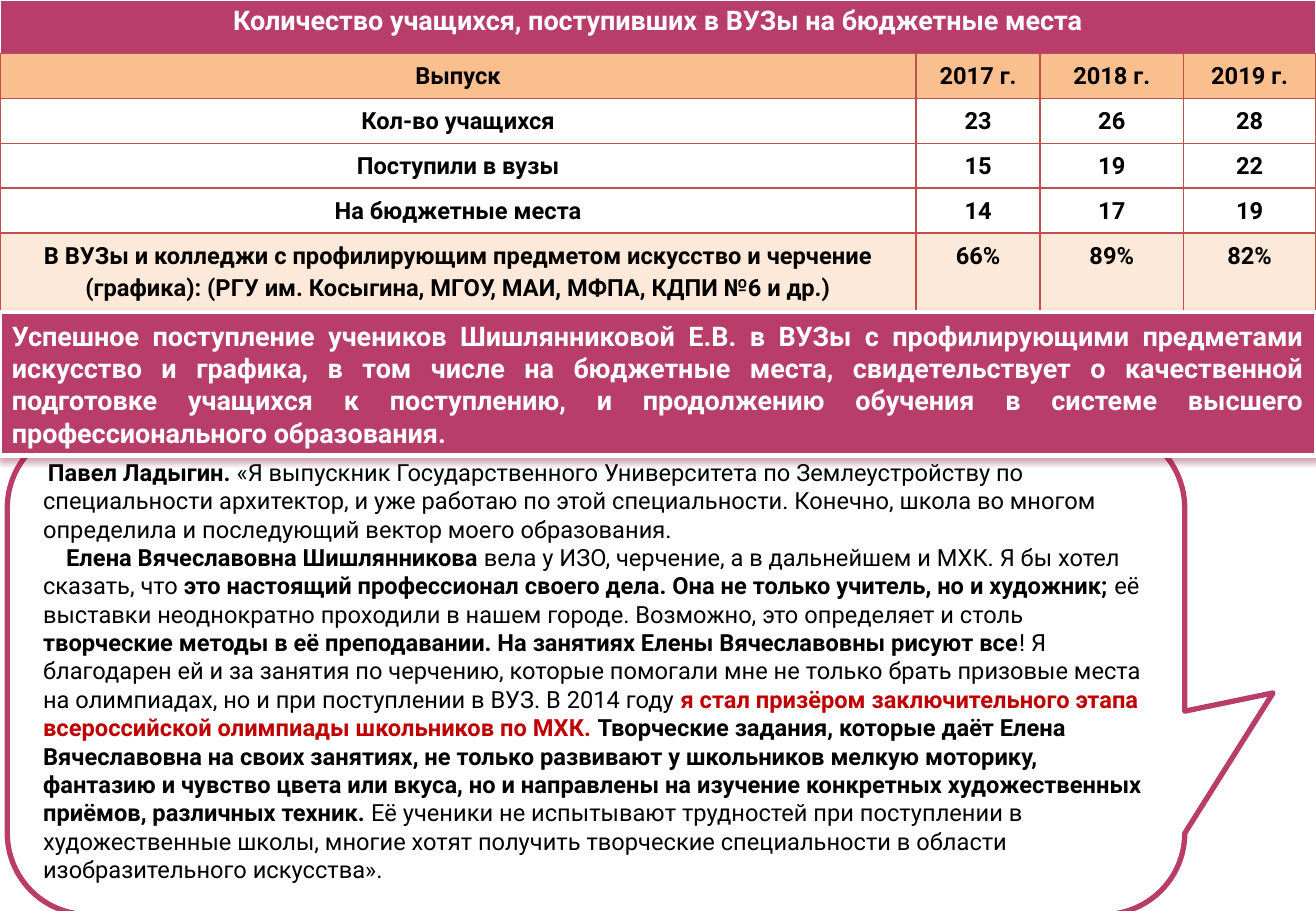
from typing import NamedTuple

from lxml import etree
from pptx import Presentation
from pptx.dml.color import RGBColor
from pptx.enum.shapes import MSO_SHAPE
from pptx.enum.text import MSO_ANCHOR, PP_ALIGN
from pptx.oxml.ns import qn
from pptx.util import Inches, Pt

CALLOUT = MSO_SHAPE.ROUNDED_RECTANGULAR_CALLOUT
RECTANGLE = MSO_SHAPE.RECTANGLE
LEFT, CENTER, JUSTIFY = PP_ALIGN.LEFT, PP_ALIGN.CENTER, PP_ALIGN.JUSTIFY
MIDDLE = MSO_ANCHOR.MIDDLE

FONT = "Roboto"
SLIDE_WIDTH, SLIDE_HEIGHT = 10.83, 7.5
COLORS = {
    "white": "FFFFFF", "black": "000000", "raspberry": "B83D68",
    "pink": "E6CED4", "pale_pink": "F3E8EB", "grid": "C0504D",
    "orange": "FABF8F", "peach": "FDE9D9", "red": "C00000",
    "shadow": "7F1238",
}


class Run(NamedTuple):
    text: str
    bold: bool = False
    color: str = "black"


class Box(NamedTuple):
    left: float
    top: float
    width: float
    height: float


class AdmissionRow(NamedTuple):
    label: str
    values: tuple[str, str, str]
    fill: str = "white"
    height: float = 0.37


ADMISSIONS = [
    AdmissionRow("Выпуск", ("2017 г.", "2018 г.", "2019 г."), "orange"),
    AdmissionRow("Кол-во учащихся", ("23", "26", "28")),
    AdmissionRow("Поступили в вузы", ("15", "19", "22")),
    AdmissionRow("На бюджетные места", ("14", "17", "19")),
    AdmissionRow(
        "В ВУЗы и колледжи с профилирующим предметом искусство и черчение "
        "(графика): (РГУ им. Косыгина, МГОУ, МАИ, МФПА, КДПИ №6 и др.)",
        ("66%", "89%", "82%"), "peach", 1.72),
]

GRADUATE_INTRO = [
    Run("Павел Ладыгин. ", True),
    Run("«Я выпускник Государственного Университета по Землеустройству по "
        "специальности архитектор, и уже работаю по этой специальности. Конечно, "
        "школа во многом определила и последующий вектор моего образования."),
]
TEACHER_PRAISE = [
    Run("Елена Вячеславовна Шишлянникова ", True),
    Run("вела у ИЗО, черчение, а в дальнейшем и МХК. Я бы хотел сказать, что "),
    Run("это настоящий профессионал своего дела. Она не только учитель, "
        "но и художник; ", True),
    Run("её выставки неоднократно проходили в нашем городе. Возможно, "
        "это определяет и столь "),
    Run("творческие методы в её преподавании. На занятиях Елены Вячеславовны "
        "рисуют все", True),
    Run("! Я благодарен ей и за занятия по черчению, которые помогали мне не только "
        "брать призовые места на олимпиадах, но и при поступлении в ВУЗ. "
        "В 2014 году "),
    Run("я стал призёром заключительного этапа всероссийской олимпиады "
        "школьников по МХК. ", True, "red"),
    Run("Творческие задания, которые даёт Елена Вячеславовна на своих занятиях, "
        "не только развивают у школьников мелкую моторику, фантазию и чувство цвета "
        "или вкуса, но и направлены на изучение конкретных художественных приёмов, "
        "различных техник. ", True),
    Run("Её ученики не испытывают трудностей при поступлении в художественные "
        "школы, многие хотят получить творческие специальности в области "
        "изобразительного искусства»."),
]
CONCLUSION = (
    "Успешное поступление учеников Шишлянниковой Е.В. в ВУЗы с профилирующими "
    "предметами искусство и графика, в том числе на бюджетные места, "
    "свидетельствует о качественной подготовке учащихся к поступлению, "
    "и продолжению обучения в системе высшего профессионального образования."
)


def rgb(color: str) -> RGBColor:
    return RGBColor.from_string(COLORS[color])


def write(paragraph, runs: list[Run], *, size: float = 14, align=LEFT,
          indent: float = 0, spacing: float | None = None, after: float = 0) -> None:
    """Fill a paragraph with runs; indent is that of the first line."""
    paragraph.alignment = align
    paragraph.space_after = Pt(after)
    if spacing:
        paragraph.line_spacing = spacing
    if indent:
        paragraph._p.get_or_add_pPr().set("indent", str(Inches(indent)))
    for part in runs:
        run = paragraph.add_run()
        run.text = part.text
        run.font.name = FONT
        run.font.size = Pt(size)
        run.font.bold = part.bold
        run.font.color.rgb = rgb(part.color)


def add_color(parent, color: str):
    return etree.SubElement(parent, qn("a:srgbClr"), val=COLORS[color])


def style_cell(cell, fill: str, border: str, bottom: float = 1) -> None:
    properties = cell._tc.get_or_add_tcPr()
    for side, width in (("L", 1), ("R", 1), ("T", 1), ("B", bottom)):
        line = etree.SubElement(properties, qn(f"a:ln{side}"), w=str(Pt(width)))
        add_color(etree.SubElement(line, qn("a:solidFill")), border)
    cell.fill.solid()
    cell.fill.fore_color.rgb = rgb(fill)


def add_grid(slide, top: float, widths: list[float], heights: list[float]):
    table = slide.shapes.add_table(
        len(heights), len(widths), 0, Inches(top),
        Inches(SLIDE_WIDTH), Inches(sum(heights))).table
    for column, width in zip(table.columns, widths):
        column.width = Inches(width)
    for row, height in zip(table.rows, heights):
        row.height = Inches(height)
    return table


def add_heading_table(slide) -> None:
    table = add_grid(slide, 0, [3.07, 7.76], [0.69, 0.77, 0.77])
    for row, fill in zip(table.rows, ("raspberry", "pink", "pale_pink")):
        for cell in row.cells:
            style_cell(cell, fill, "white", 3 if fill == "raspberry" else 1)
    heading = table.cell(0, 0)
    heading.merge(table.cell(0, 1))
    write(heading.text_frame.paragraphs[0],
          [Run("Количество учащихся, поступивших в ВУЗы на бюджетные места",
               True, "white")], size=16, align=CENTER)


def add_admissions_table(slide) -> None:
    table = add_grid(slide, 0.44, [7.54, 1.02, 1.18, 1.09],
                     [row.height for row in ADMISSIONS])
    for row, entry in zip(table.rows, ADMISSIONS):
        for cell, text in zip(row.cells, (entry.label, *entry.values)):
            style_cell(cell, entry.fill, "grid")
            cell.margin_left = cell.margin_right = Inches(0.08)
            cell.margin_top = cell.margin_bottom = Inches(0.04)
            write(cell.text_frame.paragraphs[0], [Run(text, True)],
                  align=CENTER, spacing=1.15, after=10)


def add_panel(slide, kind, box: Box, fill: str, line: str, line_width: float):
    panel = slide.shapes.add_shape(kind, *(Inches(length) for length in box))
    panel.shadow.inherit = False
    panel.fill.solid()
    panel.fill.fore_color.rgb = rgb(fill)
    panel.line.color.rgb = rgb(line)
    panel.line.width = Pt(line_width)
    panel.text_frame.word_wrap = True
    panel.text_frame.vertical_anchor = MIDDLE
    return panel


def add_testimonial(slide) -> None:
    callout = add_panel(slide, CALLOUT, Box(0.06, 3.51, 9.69, 4.02),
                        "white", "raspberry", 3.15)
    for index, value in enumerate((0.575, 0.046, 0.167)):
        callout.adjustments[index] = value
    frame = callout.text_frame
    write(frame.paragraphs[0], GRADUATE_INTRO, indent=0.04)
    write(frame.add_paragraph(), TEACHER_PRAISE, indent=0.19)


def add_conclusion(slide) -> None:
    banner = add_panel(slide, RECTANGLE, Box(0, 2.57, SLIDE_WIDTH, 1.18),
                       "raspberry", "white", 2.5)
    effects = banner._element.spPr.find(qn("a:effectLst"))
    shadow = etree.SubElement(effects, qn("a:outerShdw"), blurRad=str(Pt(4)),
                              dist=str(Pt(2)), dir="5400000", rotWithShape="0")
    etree.SubElement(add_color(shadow, "shadow"), qn("a:alpha"), val="38000")
    write(banner.text_frame.paragraphs[0], [Run(CONCLUSION, True, "white")],
          size=16, align=JUSTIFY)


def main() -> None:
    presentation = Presentation()
    presentation.slide_width = Inches(SLIDE_WIDTH)
    presentation.slide_height = Inches(SLIDE_HEIGHT)
    slide = presentation.slides.add_slide(presentation.slide_layouts[6])
    add_heading_table(slide)
    add_admissions_table(slide)
    add_testimonial(slide)
    add_conclusion(slide)
    presentation.save("out.pptx")


if __name__ == "__main__":
    main()
